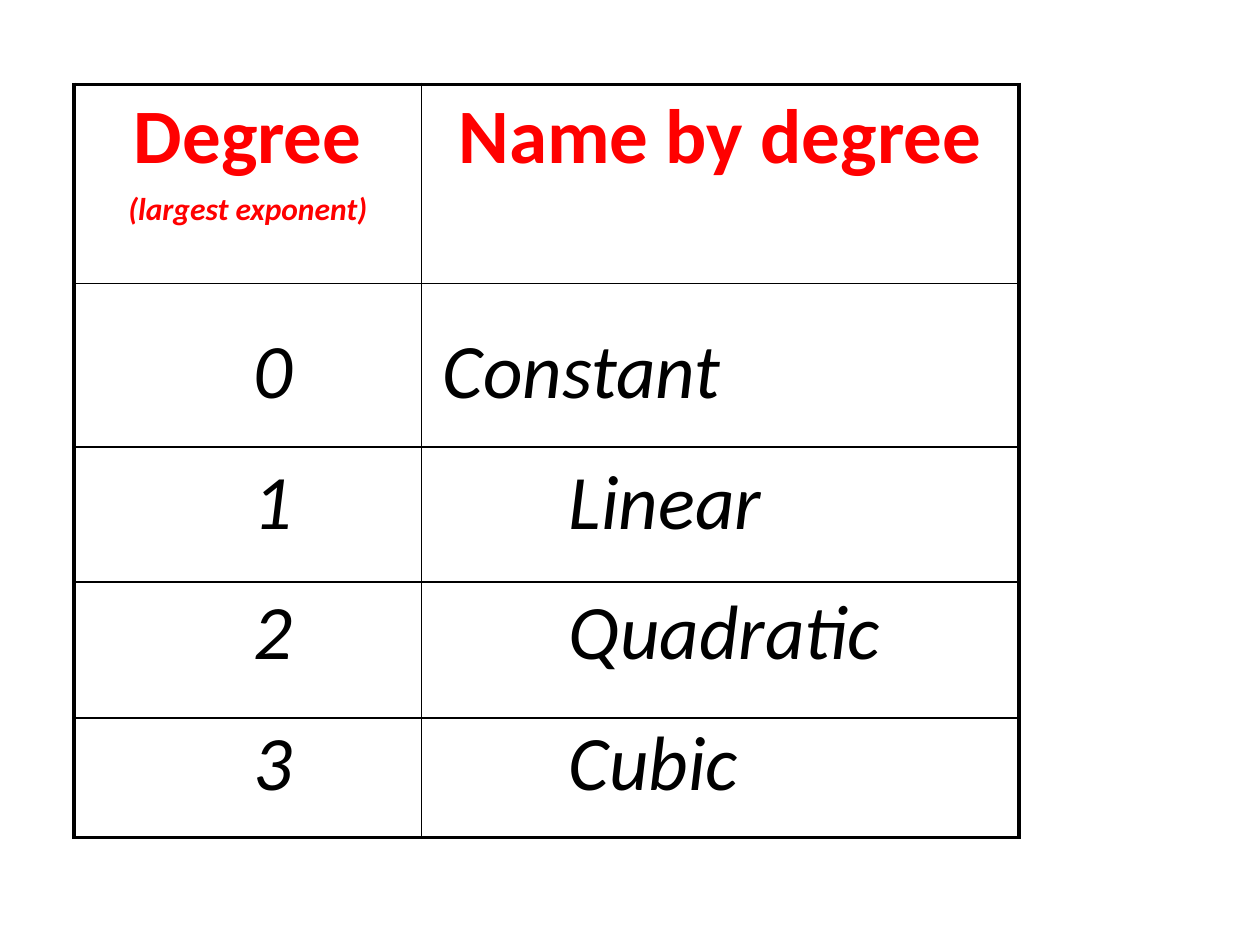
from lxml.etree import SubElement
from pptx import Presentation
from pptx.dml.color import RGBColor
from pptx.enum.text import MSO_AUTO_SIZE, PP_ALIGN
from pptx.oxml.ns import qn
from pptx.util import Cm, Pt

COLORS = {"heading": "FF0000", "text": "000000", "border": "000000"}
FONT = "Calibri"
OUTER_BORDER, INNER_BORDER = Pt(2.25), Pt(1)
COLUMN_WIDTHS = [7.01, 12.04]
ROW_HEIGHTS = [4.01, 3.3, 2.72, 2.74, 2.41]
HEADINGS = [
    [("Degree", 44, False), ("(largest exponent)", 18, True)],
    [("Name by degree", 44, False)],
]
DEGREES = [
    ("0", "Constant", 3.81),
    ("1", "Linear", 6.35),
    ("2", "Quadratic", 6.35),
    ("3", "Cubic", 6.35),
]


def format_paragraph(paragraph, size, color, bold=False, italic=False):
    for run in paragraph.runs:
        font = run.font
        font.name = FONT
        font.size = Pt(size)
        font.bold = bold
        font.italic = italic
        font.color.rgb = RGBColor.from_string(COLORS[color])


def set_borders(cell, widths):
    properties = cell._tc.get_or_add_tcPr()
    for index, (side, width) in enumerate(widths.items()):
        line = properties.makeelement(qn(f"a:{side}"), {"w": str(width)})
        fill = SubElement(line, qn("a:solidFill"))
        SubElement(fill, qn("a:srgbClr"), val=COLORS["border"])
        properties.insert(index, line)


def write_heading(cell, lines):
    cell.text_frame.text = "\n".join(text for text, size, italic in lines)
    for paragraph, (text, size, italic) in zip(cell.text_frame.paragraphs, lines):
        paragraph.alignment = PP_ALIGN.CENTER
        paragraph.space_before = Pt(3.5)
        format_paragraph(paragraph, size, "heading", bold=True, italic=italic)


def add_degree_table(slide):
    row_count, column_count = len(ROW_HEIGHTS), len(COLUMN_WIDTHS)
    table = slide.shapes.add_table(
        row_count, column_count, Cm(1.49), Cm(1.7),
        Cm(sum(COLUMN_WIDTHS)), Cm(sum(ROW_HEIGHTS)),
    ).table
    table.first_row = False
    table.horz_banding = False
    for column, width in zip(table.columns, COLUMN_WIDTHS):
        column.width = Cm(width)
    for row_index, height in enumerate(ROW_HEIGHTS):
        table.rows[row_index].height = Cm(height)
        for column_index in range(column_count):
            cell = table.cell(row_index, column_index)
            cell.fill.background()
            on_edge = {
                "lnL": column_index == 0,
                "lnR": column_index == column_count - 1,
                "lnT": row_index == 0,
                "lnB": row_index == row_count - 1,
            }
            set_borders(cell, {
                side: OUTER_BORDER if edge else INNER_BORDER
                for side, edge in on_edge.items()
            })
    for column_index, lines in enumerate(HEADINGS):
        write_heading(table.cell(0, column_index), lines)


def add_degree_list(slide):
    text_box = slide.shapes.add_textbox(Cm(4.87), Cm(6.35), Cm(16.08), Cm(10.59))
    text_frame = text_box.text_frame
    text_frame.word_wrap = True
    text_frame.auto_size = MSO_AUTO_SIZE.SHAPE_TO_FIT_TEXT
    text_frame.text = "\n".join(f"{degree}\t{name}" for degree, name, indent in DEGREES)
    for paragraph, (degree, name, indent) in zip(text_frame.paragraphs, DEGREES):
        paragraph.space_before = Pt(22)
        properties = paragraph._p.get_or_add_pPr()
        properties.set("marL", str(Cm(indent)))
        properties.set("indent", str(-Cm(indent)))
        format_paragraph(paragraph, 44, "text", italic=True)


def main():
    presentation = Presentation()
    presentation.slide_width = Cm(25.4)
    presentation.slide_height = Cm(19.05)
    slide = presentation.slides.add_slide(presentation.slide_layouts[6])
    add_degree_table(slide)
    add_degree_list(slide)
    presentation.save("out.pptx")


if __name__ == "__main__":
    main()
